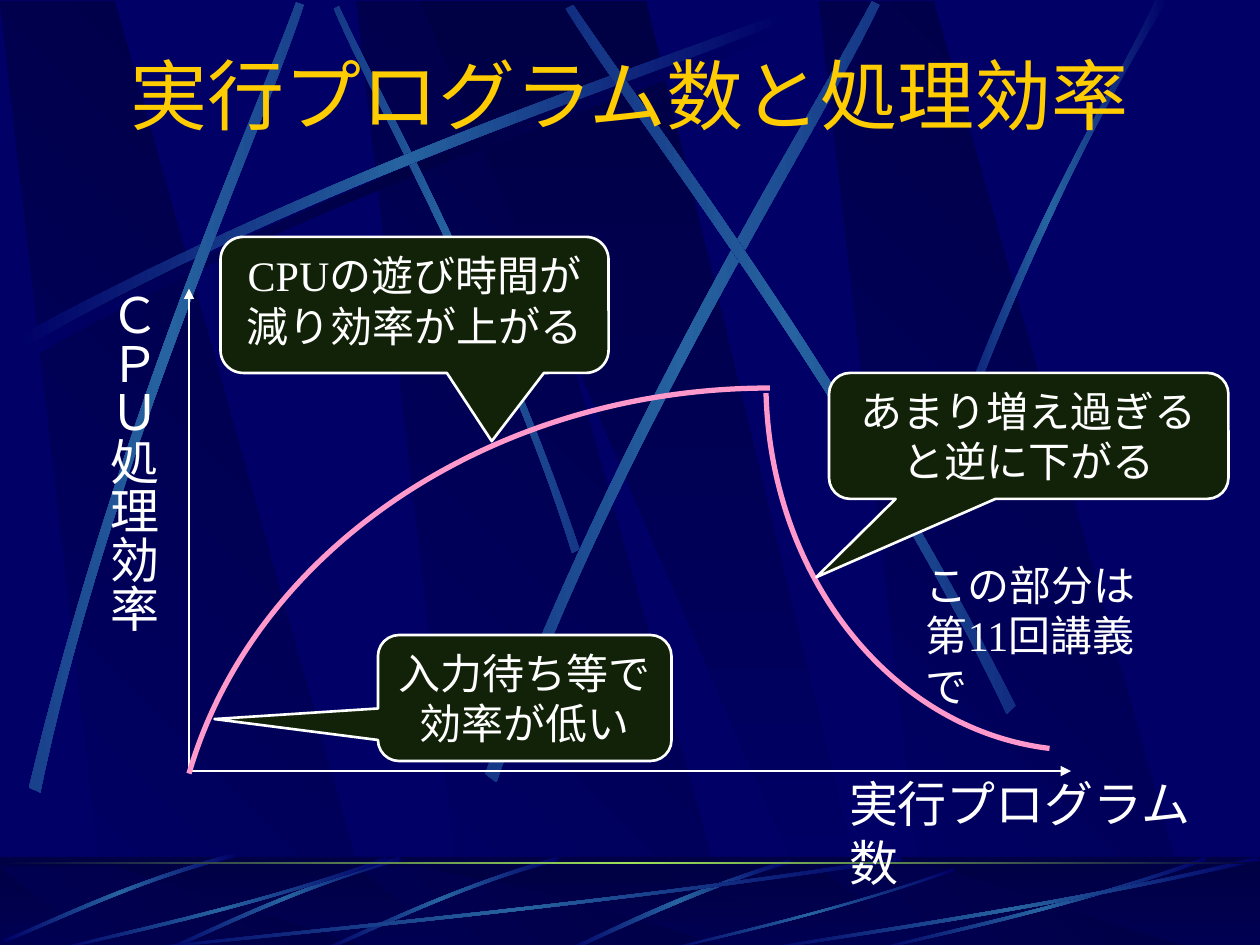
from math import cos, radians, sin

from lxml.etree import SubElement
from pptx import Presentation
from pptx.dml.color import RGBColor
from pptx.enum.shapes import MSO_CONNECTOR as Connector, MSO_SHAPE as Shape
from pptx.enum.text import MSO_ANCHOR as Anchor, PP_ALIGN as Align
from pptx.oxml import parse_xml
from pptx.oxml.ns import nsdecls, qn
from pptx.util import Inches, Pt

NAVY = RGBColor(0x00, 0x00, 0x66)
DARK = RGBColor(0x00, 0x00, 0x44)
BEAM = RGBColor(0x26, 0x63, 0xA0)
LIME = RGBColor(0x9C, 0xE1, 0x57)
GOLD = RGBColor(0xFF, 0xCC, 0x00)
WHITE = RGBColor(0xFF, 0xFF, 0xFF)
PINK = RGBColor(0xFF, 0x99, 0xCC)
FOREST = RGBColor(0x12, 0x22, 0x08)
BODY_FONT, TITLE_FONT = "Times New Roman", "Montserrat"

WIDTH, HEIGHT = 10, 7.5
FLOOR = (0, 6.8, WIDTH, 0.75)
TITLE = "実行プログラム数と処理効率"
ORIGIN, AXIS_ENDS = (1.5, 6.12), [(1.5, 2.29), (8.5, 6.12)]
CURVES = [
    ([(6.11, 3.08), (3.92, 3.08), (2.02, 4.35), (1.5, 6.14)], (6.11, 7.08)),
    ([(8.33, 5.94), (7.08, 5.79), (6.12, 4.59), (6.08, 3.12)], (8.58, 3.04)),
]
CALLOUTS = [
    (["あまり増え過ぎると逆に下がる"], (6.58, 2.96, 3.17, 1), (-0.532, 1.122, 0.167)),
    (["CPUの遊び時間が", "減り効率が上がる"], (1.75, 1.88, 3.08, 1.08), (0.199, 1.002, 0.167)),
    (["入力待ち等で", "効率が低い"], (3, 5.04, 2.33, 1), (-1.057, 0.167, 0.167)),
]
LABELS = [
    (["実行プログラム数"], (6.64, 6.09, 3.11, 0.57), 28, False),
    (["ＣＰＵ処理効率"], (0.67, 2.21, 0.67, 2.95), 28, True),
    (["この部分は", "第11回講義で"], (7.25, 4.39, 2.18, 0.91), 24, False),
]

PANEL_OFFSETS = [2.83, 0, 6.5]
PANEL = [(0.86, 1), (3.02, 1), (0.91, 0), (0, 0)]
WEDGE = [(3.33, 0), (6.58, 1), (6.94, 1), (5.13, 0)]

LONG_BEAM = [(0.14, 2.67), (2.78, 1.25), (5.18, 0.51), (6.2, 0.1),
             (6.23, 0.16), (5.22, 0.61), (2.48, 1.43), (0.17, 2.77)]
WALL_BEAMS = [
    ([(4.6, 4.36), (3.91, 2.34), (3.02, 0.77), (2.69, 0.05),
      (2.65, 0.07), (2.95, 0.79), (3.98, 2.58), (4.54, 4.39)], 45),
    (LONG_BEAM, 0),
    ([(0.23, 6.25), (0.93, 3.34), (1.97, 1.05), (2.35, 0.02),
      (2.41, 0.04), (2.07, 1.09), (0.86, 3.68), (0.32, 6.29)], 311.7),
    ([(3.85, 6.14), (4.98, 3.2), (6.38, 1.02), (6.92, 0.01),
      (6.98, 0.04), (6.49, 1.08), (4.86, 3.55), (3.94, 6.21)], 321.6),
    ([(8.06, 5.6), (6.7, 2.93), (5.16, 0.95), (4.55, 0.04),
      (4.49, 0.07), (5.07, 1.01), (6.85, 3.25), (7.99, 5.67)], 34.7),
    ([(7.38, 3.94), (8.14, 1.73), (8.88, 0.66), (9.17, 0),
      (9.27, 0), (8.36, 1.45), (7.69, 3.22), (7.44, 3.97)], 0),
]
FLOOR_BEAMS = [
    ([(6.27, 6.82), (5.37, 7.09), (4.77, 7.42), (4.48, 7.54),
      (4.53, 7.55), (4.9, 7.38), (5.71, 7), (6.28, 6.85)], 0, [0]),
    ([(4.42, 6.8), (3.55, 7.05), (2.87, 7.4), (2.56, 7.53),
      (2.57, 7.55), (2.88, 7.43), (3.65, 7.03), (4.44, 6.83)], 315, [0, -1.25]),
    ([(1.86, 6.77), (0.99, 7), (0.33, 7.34), (0.02, 7.46),
      (0.03, 7.48), (0.34, 7.37), (1.1, 6.98), (1.88, 6.8)], 315, [0]),
    ([(7.17, 6.83), (4.49, 7.23), (2.06, 7.44), (1.03, 7.55),
      (1, 7.54), (2.02, 7.41), (4.8, 7.18), (7.14, 6.8)], 0, [0]),
    ([(3.08, 6.83), (1.93, 7.23), (0.88, 7.44), (0.43, 7.55),
      (0.42, 7.54), (0.86, 7.41), (2.06, 7.18), (3.07, 6.8)], 0, [0, 6.5]),
    ([(7.58, 6.91), (6.58, 7.26), (5.67, 7.45), (5.28, 7.55),
      (5.27, 7.54), (5.65, 7.43), (6.69, 7.22), (7.57, 6.89)], 0, [0]),
    ([(10, 6.83), (8.27, 7.23), (6.69, 7.44), (6.02, 7.55),
      (6, 7.54), (6.66, 7.41), (8.46, 7.18), (9.98, 6.8)], 0, [0]),
]


def box(lengths):
    return [Inches(length) for length in lengths]


def shift(points, dx, dy=0):
    return [(x + dx, y + dy) for x, y in points]


def turn(points, degrees):
    c, s = cos(radians(degrees)), sin(radians(degrees))
    return [(x * c - y * s, x * s + y * c) for x, y in points]


def unrotate(points, degrees):
    level = turn(points, -degrees)
    center = [(min(values) + max(values)) / 2 for values in zip(*level)]
    (x, y), = turn([center], degrees)
    return shift(level, x - center[0], y - center[1])


def add_outline(shapes, points, close=True, curved=False, corner=None):
    first, *rest = [box(point) for point in points]
    builder = shapes.build_freeform(*first)
    builder.add_line_segments(rest, close=close)
    if corner:
        builder.move_to(*box(corner))
    shape = builder.convert_to_shape()
    shape.shadow.inherit = False
    if curved:
        segments = list(shape._element.iter(qn("a:lnTo")))
        for start in range(0, len(segments), 4):
            head, *others = segments[start:start + 3]
            head.tag = qn("a:cubicBezTo")
            for other in others:
                head.append(other[0])
                other.getparent().remove(other)
    return shape


def fill_gradient(shape, colors, angle):
    stops = "".join(
        f'<a:gs pos="{round(100000 * index / (len(colors) - 1))}"><a:srgbClr val="{color}"/></a:gs>'
        for index, color in enumerate(colors))
    shape.fill.background()
    properties = shape._element.spPr
    properties.replace(properties.find(qn("a:noFill")), parse_xml(
        f'<a:gradFill {nsdecls("a")} rotWithShape="0"><a:gsLst>{stops}</a:gsLst>'
        f'<a:lin ang="{angle * 60000}" scaled="0"/></a:gradFill>'))
    shape.line.fill.background()


def add_beam(shapes, points, rotation=0, color=BEAM):
    beam = add_outline(shapes, unrotate(points, rotation), curved=True)
    beam.rotation = rotation
    fill_gradient(beam, [NAVY, color, NAVY], 0)


def add_panels(shapes, top, bottom):
    def place(points, dx=0):
        return [(x + dx, top + (bottom - top) * y) for x, y in points]
    for offset in PANEL_OFFSETS:
        fill_gradient(add_outline(shapes, place(PANEL, offset)), [NAVY, DARK], 315)
    fill_gradient(add_outline(shapes, place(WEDGE)), [DARK, NAVY], 90)


def add_bar(shapes, place):
    shape = shapes.add_shape(Shape.RECTANGLE, *box(place))
    shape.shadow.inherit = False
    shape.line.fill.background()
    return shape


def write(text_frame, lines, size, color=WHITE, font=BODY_FONT, align=Align.LEFT):
    text_frame.word_wrap = True
    text_frame.text = "\n".join(lines)
    for paragraph in text_frame.paragraphs:
        paragraph.alignment = align
        for run in paragraph.runs:
            run.font.size, run.font.name = Pt(size), font
            run.font.color.rgb = color


def add_backdrop(slide, master):
    master.background.fill.solid()
    master.background.fill.fore_color.rgb = NAVY
    group = slide.shapes.add_group_shape()
    shapes = group.shapes
    add_panels(shapes, 0.01, 7.52)
    add_beam(shapes, shift(LONG_BEAM, 0.06, 0.08), color=DARK)
    for points, rotation in WALL_BEAMS:
        add_beam(shapes, points, rotation)
    fill_gradient(add_bar(shapes, FLOOR), [DARK, NAVY], 90)
    add_panels(shapes, 6.88, 7.55)
    veil = add_bar(shapes, FLOOR)
    veil.fill.solid()
    veil.fill.fore_color.rgb = DARK
    SubElement(next(veil._element.spPr.iter(qn("a:srgbClr"))), qn("a:alpha"), val="50000")
    for points, rotation, offsets in FLOOR_BEAMS:
        for offset in offsets:
            add_beam(shapes, shift(points, offset), rotation)
    fill_gradient(add_bar(shapes, (0, 6.84, WIDTH, 0.02)), [DARK, LIME, DARK], 0)
    for number, properties in enumerate(group._element.iter(qn("p:cNvPr")), 100):
        properties.set("id", str(number))
    master.shapes._spTree.insert(2, group._element)


def add_chart_lines(shapes):
    for end in AXIS_ENDS:
        axis = shapes.add_connector(Connector.STRAIGHT, *box(ORIGIN + end))
        axis.line.color.rgb, axis.line.width = WHITE, Pt(1.5)
        SubElement(axis.line._get_or_add_ln(), qn("a:tailEnd"), type="triangle")
        SubElement(axis._element.spPr, qn("a:effectLst"))
    for points, corner in CURVES:
        curve = add_outline(shapes, points, close=False, curved=True, corner=corner)
        curve.fill.background()
        curve.line.color.rgb, curve.line.width = PINK, Pt(3)


def main():
    presentation = Presentation()
    presentation.slide_width, presentation.slide_height = box((WIDTH, HEIGHT))
    slide = presentation.slides.add_slide(presentation.slide_layouts[5])
    add_backdrop(slide, presentation.slide_master)
    title = slide.shapes.title
    title.left, title.top, title.width, title.height = box((0.75, 0.33, 8.5, 0.83))
    title.text_frame.vertical_anchor = Anchor.MIDDLE
    write(title.text_frame, [TITLE], 44, GOLD, TITLE_FONT, Align.CENTER)
    add_chart_lines(slide.shapes)
    for lines, place, size, vertical in LABELS:
        label = slide.shapes.add_textbox(*box(place))
        write(label.text_frame, lines, size)
        if vertical:
            label.text_frame._txBody.bodyPr.set("vert", "eaVert")
    for lines, place, adjustments in CALLOUTS:
        callout = slide.shapes.add_shape(Shape.ROUNDED_RECTANGULAR_CALLOUT, *box(place))
        callout.shadow.inherit = False
        for index, value in enumerate(adjustments):
            callout.adjustments[index] = value
        callout.fill.solid()
        callout.fill.fore_color.rgb = FOREST
        callout.line.color.rgb, callout.line.width = WHITE, Pt(1.5)
        callout.text_frame.vertical_anchor = Anchor.TOP
        write(callout.text_frame, lines, 24, align=Align.CENTER)
    presentation.save("out.pptx")


if __name__ == "__main__":
    main()
